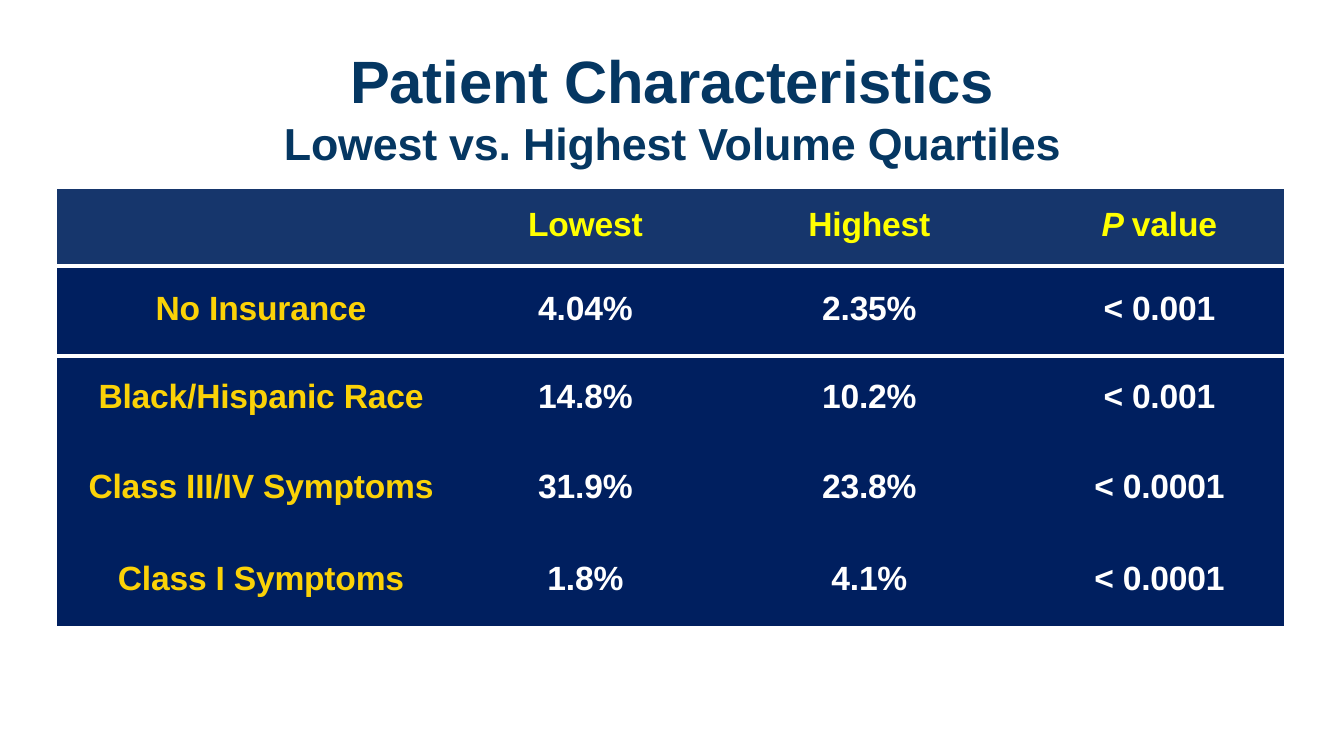
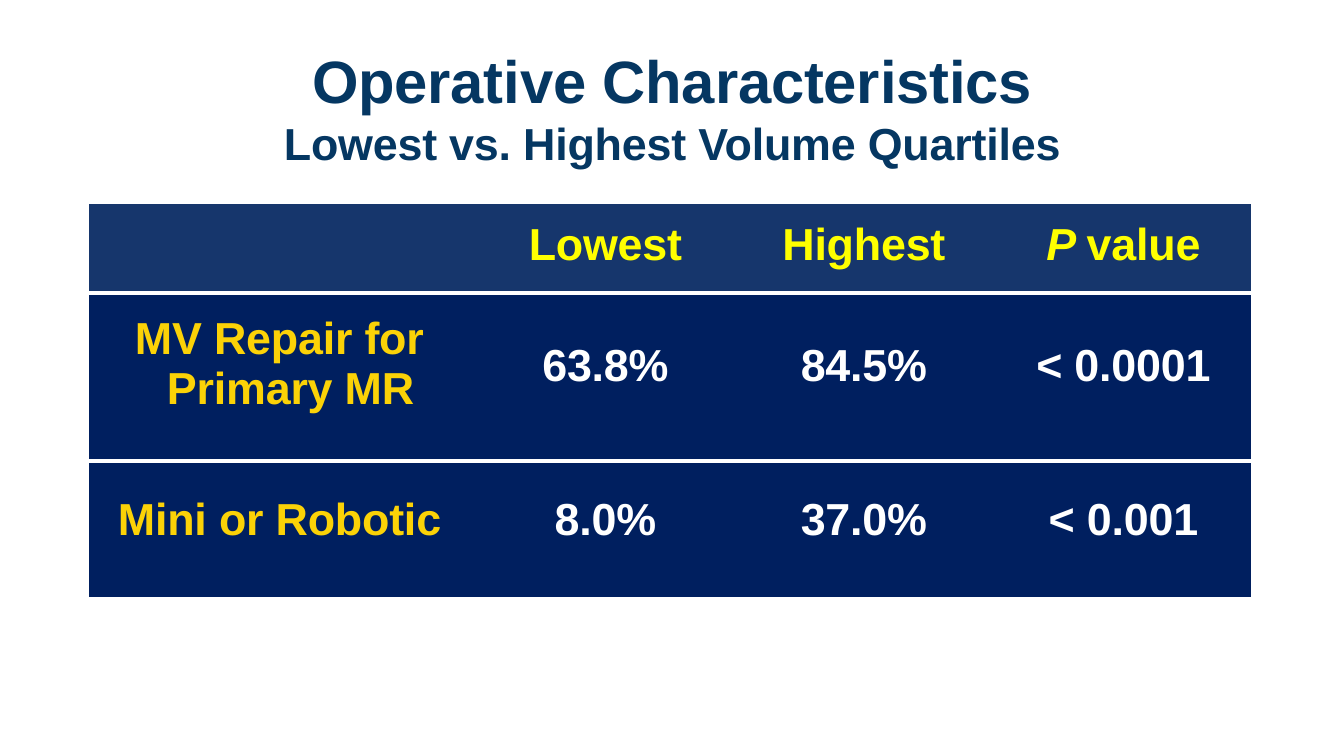
from lxml import etree
from pptx import Presentation
from pptx.dml.color import RGBColor
from pptx.enum.text import MSO_ANCHOR, PP_ALIGN
from pptx.oxml.ns import qn
from pptx.util import Emu, Pt

CENTER, LEFT = PP_ALIGN.CENTER, PP_ALIGN.LEFT
TOP = MSO_ANCHOR.TOP
PX = 914400 / 134.4
NO_STYLE = "{2D5ABB26-0587-4C30-8999-92F81FD0307C}"
FONT = "Arial"
WHITE, TITLE_BLUE = "FFFFFF", "053762"
HEADER_FILL, BODY_FILL = "16366C", "001F5F"
HEADER_TEXT, LABEL_TEXT = "FFFF00", "FBD207"
RULE_PT = 2.25
RULED_ROWS = 2
HEADINGS = ("", "Lowest", "Highest", (("P ", True), ("value", False)))


def px(length):
    return Emu(round(length * PX))


def color(code):
    return RGBColor.from_string(code)


class Deck:
    """Holds the shared style and the slide being built."""

    def __init__(self):
        self.prs = Presentation()
        self.prs.slide_width, self.prs.slide_height = px(1344), px(756)
        self.slide = None

    def new_slide(self):
        self.slide = self.prs.slides.add_slide(self.prs.slide_layouts[6])

    def add_text(self, paragraph, content, size, code, align=CENTER):
        paragraph.alignment = align
        runs = ((content, False),) if isinstance(content, str) else content
        for text, italic in runs:
            run = paragraph.add_run()
            run.text = text
            font = run.font
            font.name, font.size = FONT, Pt(size)
            font.bold, font.italic = True, italic
            font.color.rgb = color(code)
            font._element.set("spc", "-10")

    def title(self, heading, subheading):
        frame = self.slide.shapes.add_textbox(px(277), px(35), px(790), px(130)).text_frame
        frame.word_wrap = True
        frame.vertical_anchor = TOP
        frame.margin_left = frame.margin_right = frame.margin_bottom = 0
        frame.margin_top = px(9)
        self.add_text(frame.paragraphs[0], heading, 32, TITLE_BLUE)
        self.add_text(frame.add_paragraph(), subheading, 24, TITLE_BLUE)

    def border(self, cell, widths):
        props = cell._tc.get_or_add_tcPr()
        for position, (side, width) in enumerate(widths.items()):
            line = etree.Element(qn(f"a:ln{side}"), w=str(Pt(width)))
            if width:
                fill = etree.SubElement(line, qn("a:solidFill"))
                etree.SubElement(fill, qn("a:srgbClr"), val=WHITE)
            else:
                etree.SubElement(line, qn("a:noFill"))
            props.insert(position, line)

    def table(self, left, top, columns, rows, size, frame_pt):
        width = sum(column[0] for column in columns)
        height = sum(row[0] for row in rows)
        table = self.slide.shapes.add_table(
            len(rows), len(columns), px(left), px(top), px(width), px(height)).table
        table.first_row = table.horz_banding = False
        table._tbl.tblPr.find(qn("a:tableStyleId")).text = NO_STYLE
        for c, (column_width, *_) in enumerate(columns):
            table.columns[c].width = px(column_width)
        for r, (row_height, label_inset, value_inset, contents, hanging) in enumerate(rows):
            table.rows[r].height = px(row_height)
            for c, (_, margin_left, margin_right) in enumerate(columns):
                cell = table.cell(r, c)
                cell.fill.solid()
                cell.fill.fore_color.rgb = color(BODY_FILL if r else HEADER_FILL)
                cell.vertical_anchor = TOP
                cell.margin_left, cell.margin_right = px(margin_left), px(margin_right)
                cell.margin_top = px(value_inset if c else label_inset)
                cell.margin_bottom = 0
                self.border(cell, {
                    "L": 0 if c else frame_pt,
                    "R": frame_pt if c == len(columns) - 1 else 0,
                    "T": frame_pt if r == 0 else RULE_PT if r <= RULED_ROWS else 0,
                    "B": RULE_PT if r < RULED_ROWS else frame_pt if r == len(rows) - 1 else 0,
                })
                if not contents[c]:
                    continue
                paragraph = cell.text_frame.paragraphs[0]
                code = HEADER_TEXT if r == 0 else WHITE if c else LABEL_TEXT
                hangs = hanging and c == 0
                self.add_text(paragraph, contents[c], size, code, LEFT if hangs else CENTER)
                if hangs:
                    first, following = hanging
                    props = paragraph._p.get_or_add_pPr()
                    props.set("marL", str(px(following)))
                    props.set("indent", str(px(first - following)))


def main():
    deck = Deck()
    comparison = "Lowest vs. Highest Volume Quartiles"

    deck.new_slide()
    deck.title("Patient Characteristics", comparison)
    patient_columns = ((431, 0, 21), (239, 0, 42), (286, 1, 0), (273, 22, 0))
    patient_rows = (
        (78, 18, 18, HEADINGS, None),
        (90, 24, 24, ("No Insurance", "4.04%", "2.35%", "< 0.001"), None),
        (89, 22, 22, ("Black/Hispanic Race", "14.8%", "10.2%", "< 0.001"), None),
        (91, 23, 23, ("Class III/IV Symptoms", "31.9%", "23.8%", "< 0.0001"), None),
        (91, 24, 24, ("Class I Symptoms", "1.8%", "4.1%", "< 0.0001"), None),
    )
    deck.table(56, 188, patient_columns, patient_rows, 18, 1)

    deck.new_slide()
    operative_columns = ((406, 0, 0), (239, 0, 14), (259, 5, 0), (262, 3, 0))
    operative_rows = (
        (91, 18, 18, HEADINGS, None),
        (168, 21, 48, ("MV Repair for Primary MR", "63.8%", "84.5%", "< 0.0001"), (48, 80)),
        (138, 34, 34, ("Mini or Robotic", "8.0%", "37.0%", "< 0.001"), (31, 31)),
    )
    deck.table(87, 202, operative_columns, operative_rows, 24, RULE_PT)
    deck.title("Operative Characteristics", comparison)

    deck.prs.save("out.pptx")


if __name__ == "__main__":
    main()
